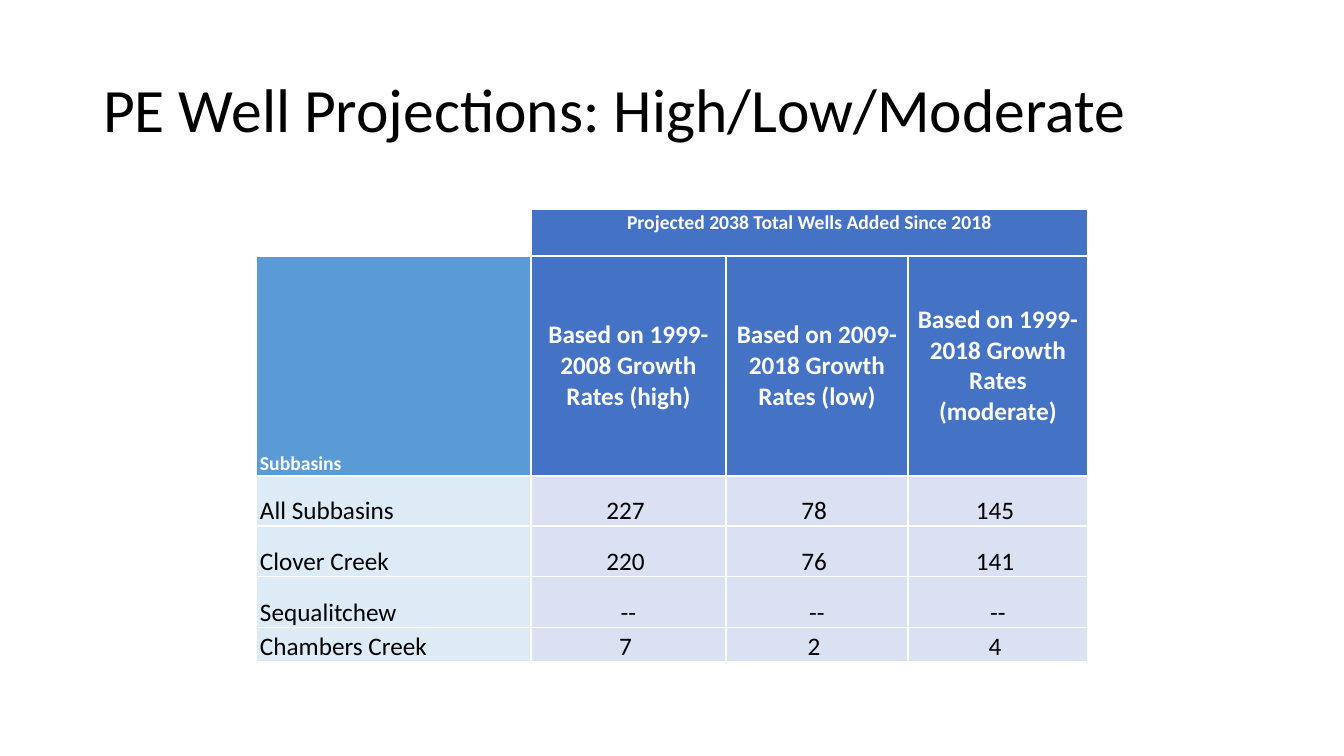
from dataclasses import dataclass

from lxml.etree import SubElement
from pptx import Presentation
from pptx.dml.color import RGBColor
from pptx.enum.text import MSO_ANCHOR, PP_ALIGN
from pptx.oxml.ns import qn
from pptx.util import Emu, Pt

SLIDE_WIDTH, SLIDE_HEIGHT = 1344, 756
EMU_PER_PX = 12192000 / SLIDE_WIDTH


@dataclass(frozen=True)
class Theme:
    font: str = "Calibri"
    ink: str = "000000"
    white: str = "FFFFFF"
    header: str = "4472C4"
    subbasin_header: str = "5B9BD5"
    subbasin: str = "DDEBF7"
    value: str = "D9E1F2"
    title_size: int = 44
    body_size: int = 18
    label_size: int = 14


THEME = Theme()
SPAN_HEADING = "Projected 2038 Total Wells Added Since 2018"
HEADINGS = [
    "Subbasins",
    "Based on 1999-2008 Growth Rates (high)",
    "Based on 2009-2018 Growth Rates (low)",
    "Based on 1999-2018 Growth Rates (moderate)",
]
PROJECTIONS = [
    ["All Subbasins", "227 ", "78 ", "145 "],
    ["Clover Creek", "220 ", "76 ", "141 "],
    ["Sequalitchew", "--", "--", "--"],
    ["Chambers Creek", "7 ", "2 ", "4 "],
]
COLUMN_WIDTHS = [275, 195, 182, 180]
ROW_HEIGHTS = [47, 220, 50, 51, 51, 34]


def px(length):
    return Emu(round(length * EMU_PER_PX))


def write_text(frame, text, size=THEME.body_size, color=THEME.ink, bold=False,
               align=PP_ALIGN.LEFT, line_spacing=None):
    paragraph = frame.paragraphs[0]
    paragraph.alignment = align
    paragraph.line_spacing = line_spacing
    run = paragraph.add_run()
    run.text = text
    run.font.name = THEME.font
    run.font.size = Pt(size)
    run.font.bold = bold
    run.font.color.rgb = RGBColor.from_string(color)


def add_cell_borders(cell):
    """Call before filling the cell: borders come first in its properties."""
    properties = cell._tc.get_or_add_tcPr()
    for side in ("a:lnL", "a:lnR", "a:lnT", "a:lnB"):
        line = SubElement(properties, qn(side), w=str(Pt(1)))
        fill = SubElement(line, qn("a:solidFill"))
        SubElement(fill, qn("a:srgbClr"), val=THEME.white)


def fill_cell(cell, text, fill, anchor=MSO_ANCHOR.BOTTOM, top_margin=0, **text_format):
    cell.fill.solid()
    cell.fill.fore_color.rgb = RGBColor.from_string(fill)
    cell.vertical_anchor = anchor
    cell.margin_left = cell.margin_right = px(4)
    cell.margin_top, cell.margin_bottom = px(top_margin), 0
    write_text(cell.text_frame, text, **text_format)


def place_title(slide, left, top, width, height):
    title = slide.shapes.title
    title.left, title.top, title.width, title.height = map(px, (left, top, width, height))
    title.text_frame.vertical_anchor = MSO_ANCHOR.MIDDLE
    write_text(title.text_frame, "PE Well Projections: High/Low/Moderate",
               size=THEME.title_size, line_spacing=0.9)


def add_projection_table(slide, left, top):
    table = slide.shapes.add_table(
        len(ROW_HEIGHTS), len(COLUMN_WIDTHS), px(left), px(top),
        px(sum(COLUMN_WIDTHS)), px(sum(ROW_HEIGHTS))).table
    table.first_row = table.horz_banding = False
    for column, width in zip(table.columns, COLUMN_WIDTHS):
        column.width = px(width)
    for row, height in zip(table.rows, ROW_HEIGHTS):
        row.height = px(height)
    for cell in table.iter_cells():
        add_cell_borders(cell)

    heading = {"color": THEME.white, "bold": True}
    centred = {"align": PP_ALIGN.CENTER}
    table.cell(0, 0).fill.background()
    table.cell(0, 1).merge(table.cell(0, 3))
    fill_cell(table.cell(0, 1), SPAN_HEADING, THEME.header, anchor=MSO_ANCHOR.TOP,
              top_margin=2, size=THEME.label_size, **heading, **centred)
    fill_cell(table.cell(1, 0), HEADINGS[0], THEME.subbasin_header,
              size=THEME.label_size, **heading)
    for column, text in enumerate(HEADINGS[1:], start=1):
        fill_cell(table.cell(1, column), text, THEME.header,
                  anchor=MSO_ANCHOR.MIDDLE, **heading, **centred)
    for row, (subbasin, *values) in enumerate(PROJECTIONS, start=2):
        fill_cell(table.cell(row, 0), subbasin, THEME.subbasin)
        for column, value in enumerate(values, start=1):
            fill_cell(table.cell(row, column), value, THEME.value, **centred)


def main():
    presentation = Presentation()
    presentation.slide_width = px(SLIDE_WIDTH)
    presentation.slide_height = px(SLIDE_HEIGHT)
    slide = presentation.slides.add_slide(presentation.slide_layouts.get_by_name("Title Only"))
    place_title(slide, 93, 40, 1159, 146)
    add_projection_table(slide, 256, 209)
    presentation.save("out.pptx")


if __name__ == "__main__":
    main()
